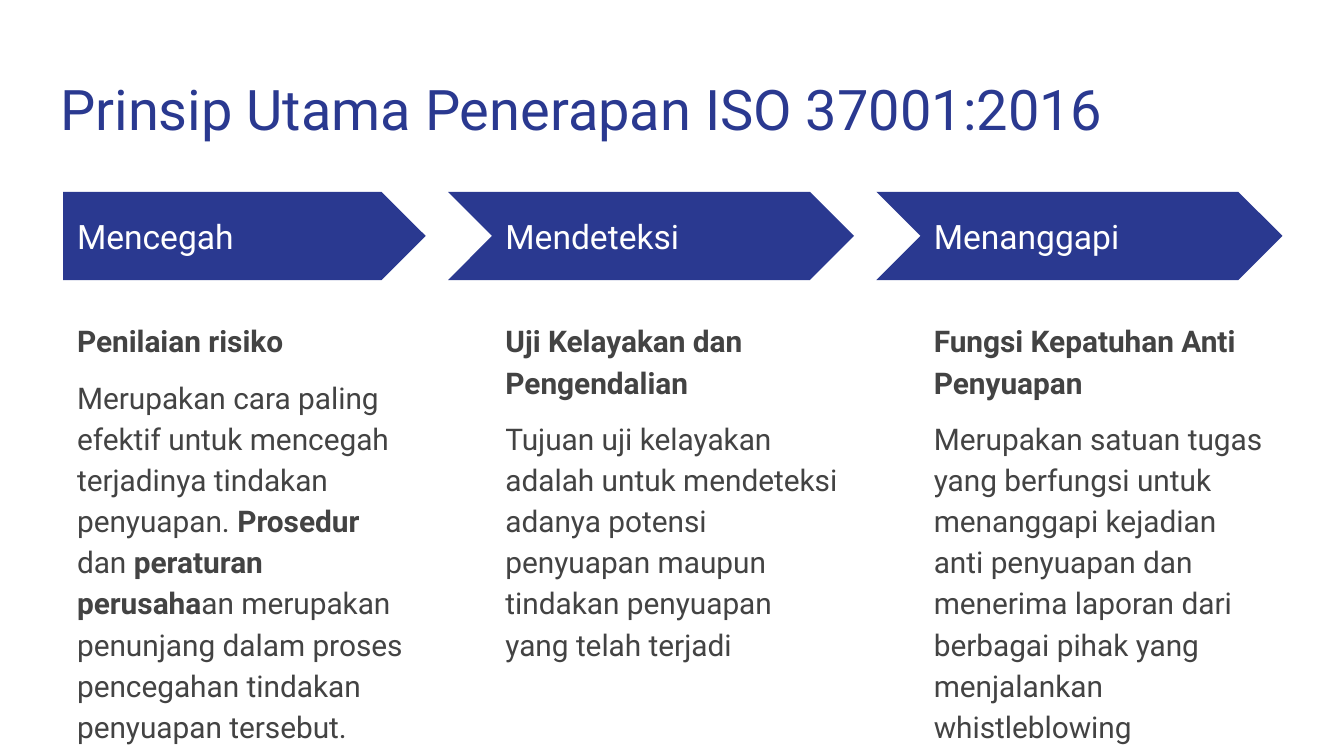
"""Build a slide of three arrow steps with a detail column under each."""
from pptx import Presentation
from pptx import util as u
from pptx.dml.color import RGBColor
from pptx.enum import shapes, text
from pptx.oxml import parse_xml
from pptx.oxml.ns import nsdecls

TITLE = "Prinsip Utama Penerapan ISO 37001:2016"
STEPS = [
    ("Mencegah", "Penilaian risiko", [
        ("Merupakan cara paling efektif untuk mencegah terjadinya tindakan penyuapan. ", False),
        ("Prosedur", True),
        (" dan ", False),
        ("peraturan perusaha", True),
        ("an merupakan penunjang dalam proses pencegahan tindakan penyuapan tersebut.", False),
    ]),
    ("Mendeteksi", "Uji Kelayakan dan Pengendalian", [
        ("Tujuan uji kelayakan adalah untuk mendeteksi adanya potensi "
         "penyuapan maupun tindakan penyuapan yang telah terjadi", False),
    ]),
    ("Menanggapi", "Fungsi Kepatuhan Anti Penyuapan", [
        ("Merupakan satuan tugas yang berfungsi untuk menanggapi kejadian anti penyuapan "
         "dan menerima laporan dari berbagai pihak yang menjalankan whistleblowing", False),
    ]),
]
THEME = {"font": "Roboto", "blue": "2A3990", "gray": "434343", "white": "FFFFFF",
         "title": 30, "step": 18, "body": 16}
LEFT, PITCH, WIDE, NOTCH = 45, 306, 259, 31
TOP, HIGH = 137, 63
SLOTS = [1, 2, 4]


def px(n):
    return u.Emu(n * 9525)


def place(box, x, y, w, h):
    box.left, box.top, box.width, box.height = map(px, (x, y, w, h))


def frame(box, anchor=text.MSO_ANCHOR.TOP):
    tf = box.text_frame
    tf.word_wrap = True
    tf.auto_size = text.MSO_AUTO_SIZE.NONE
    tf.vertical_anchor = anchor
    tf.margin_left = tf.margin_right = tf.margin_top = tf.margin_bottom = px(10)
    return tf


def style(par, size, color, bold=False):
    par.alignment = text.PP_ALIGN.LEFT
    for run in par.runs:
        font = run.font
        font.name, font.size, font.bold = THEME["font"], u.Pt(THEME[size]), bold
        font.color.rgb = RGBColor.from_string(THEME[color])


def plain(par, gap=0):
    par.line_spacing = 1.15
    par.space_before = par.space_after = u.Pt(gap)
    props = par._p.get_or_add_pPr()
    props.set("marL", "0")
    props.set("indent", "0")
    props.append(parse_xml(f"<a:buNone {nsdecls('a')}/>"))


def arrow(slide, x, first):
    kind = shapes.MSO_SHAPE.PENTAGON if first else shapes.MSO_SHAPE.CHEVRON
    back = 0 if first else NOTCH
    shape = slide.shapes.add_shape(kind, px(x - back), px(TOP), px(WIDE + back), px(HIGH))
    shape.adjustments[0] = 0.5
    shape.shadow.inherit = False
    shape.fill.solid()
    shape.fill.fore_color.rgb = RGBColor.from_string(THEME["blue"])
    shape.line.fill.background()


def label(slide, x, name):
    box = slide.shapes.add_textbox(px(x), px(TOP + 15), px(237), px(33))
    tf = frame(box, text.MSO_ANCHOR.MIDDLE)
    tf.text = name
    style(tf.paragraphs[0], "step", "white")


def detail(box, x, head, parts):
    place(box, x, 217, WIDE, 278)
    tf = frame(box)
    tf.text = head
    style(tf.paragraphs[0], "body", "gray", True)
    plain(tf.paragraphs[0])
    par = tf.add_paragraph()
    for words, _ in parts:
        par.add_run().text = words
    style(par, "body", "gray")
    for run, (_, bold) in zip(par.runs, parts):
        run.font.bold = bold
    plain(par, 8)


def main():
    prs = Presentation()
    prs.slide_width, prs.slide_height = px(960), px(540)
    slide = prs.slides.add_slide(prs.slide_layouts.get_by_name("Comparison"))
    title = slide.shapes.title
    place(title, 33, 43, 895, 63)
    tf = frame(title)
    tf.text = TITLE
    style(tf.paragraphs[0], "title", "blue")

    slots = {p.placeholder_format.idx: p for p in slide.placeholders}
    for i, (name, head, parts) in enumerate(STEPS):
        x = LEFT + i * PITCH
        arrow(slide, x, i == 0)
        label(slide, x, name)
        detail(slots[SLOTS[i]], x, head, parts)

    for idx, box in slots.items():
        if idx not in [0, *SLOTS]:
            box.element.getparent().remove(box.element)
    prs.save("out.pptx")


if __name__ == "__main__":
    main()
